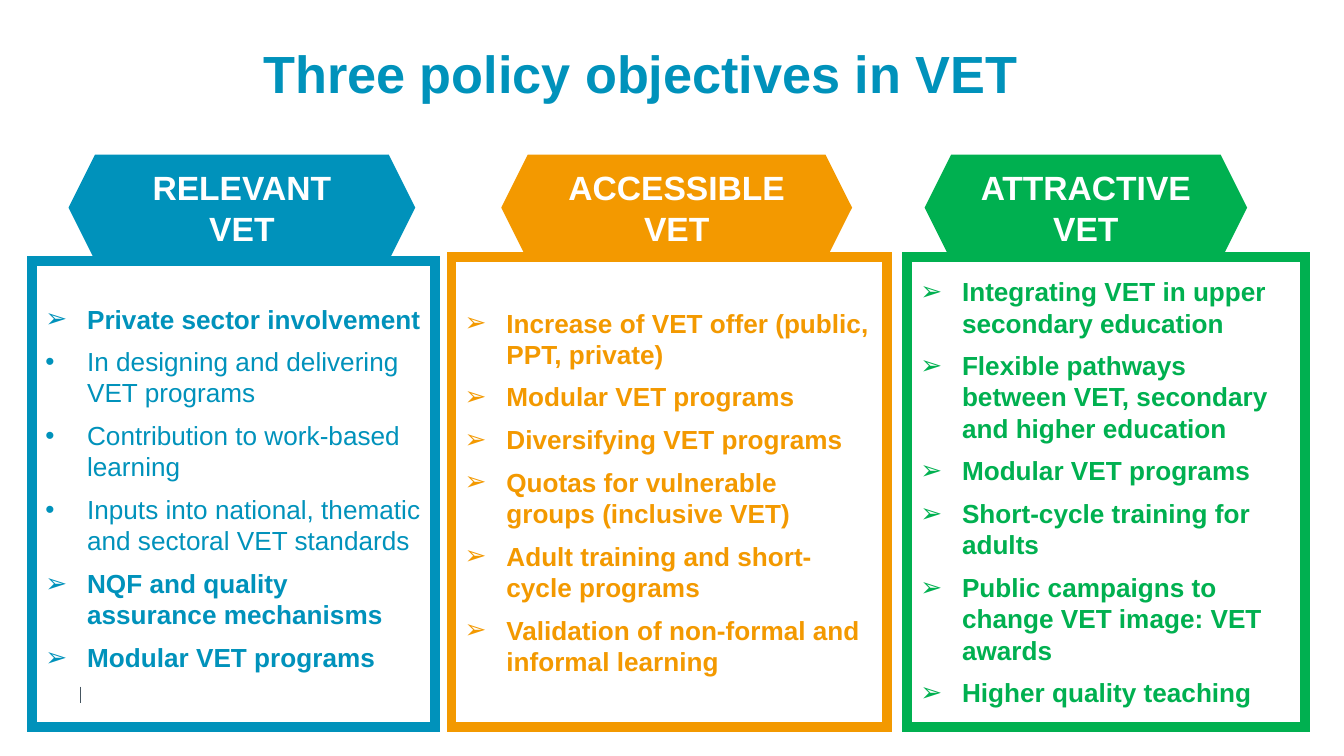
from pptx import Presentation
from pptx.dml.color import RGBColor
from pptx.enum.shapes import MSO_CONNECTOR, MSO_SHAPE
from pptx.enum.text import MSO_ANCHOR, PP_ALIGN
from pptx.oxml.ns import qn
from pptx.util import Inches, Pt
from lxml import etree

BLUE = RGBColor(0x00, 0x92, 0xBB)
ORANGE = RGBColor(0xF3, 0x99, 0x00)
GREEN = RGBColor(0x00, 0xB0, 0x50)
WHITE = RGBColor(0xFF, 0xFF, 0xFF)
SLATE = RGBColor(0x45, 0x55, 0x60)
ARROW, DOT = "➢", "•"
CARD_BOTTOM = 5.41

# Each objective: heading, colour, card (left, top, width),
# card insets (right, bottom), banner (left, width, side inset), points
OBJECTIVES = [
    ("RELEVANT VET", BLUE, (0.24, 1.94, 3), (0.1, 0.14), (0.51, 2.58, 0.1), [
        (ARROW, "Private sector involvement"),
        (DOT, "In designing and delivering VET programs"),
        (DOT, "Contribution to work-based learning"),
        (DOT, "Inputs into national, thematic and sectoral VET standards"),
        (ARROW, "NQF and quality assurance mechanisms"),
        (ARROW, "Modular VET programs"),
    ]),
    ("ACCESSIBLE VET", ORANGE, (3.36, 1.91, 3.24), (0.13, 0.05), (3.73, 2.61, 0), [
        (ARROW, "Increase of VET offer (public, PPT, private)"),
        (ARROW, "Modular VET programs"),
        (ARROW, "Diversifying VET programs"),
        (ARROW, "Quotas for vulnerable groups (inclusive VET)"),
        (ARROW, "Adult training and short-cycle programs"),
        (ARROW, "Validation of non-formal and informal learning"),
    ]),
    ("ATTRACTIVE VET", GREEN, (6.75, 1.91, 2.96), (0.1, 0.05), (6.88, 2.4, 0), [
        (ARROW, "Integrating VET in upper secondary education"),
        (ARROW, "Flexible pathways between VET, secondary and higher education"),
        (ARROW, "Modular VET programs"),
        (ARROW, "Short-cycle training for adults"),
        (ARROW, "Public campaigns to change VET image: VET awards"),
        (ARROW, "Higher quality teaching"),
    ]),
]


def style_text(paragraph, size, color, bold=True):
    for run in paragraph.runs:
        run.font.name = "Arial"
        run.font.size = Pt(size)
        run.font.bold = bold
        run.font.color.rgb = color


def add_bullet(paragraph, symbol):
    properties = paragraph._p.get_or_add_pPr()
    properties.set("marL", str(Inches(0.31)))
    properties.set("indent", str(-Inches(0.31)))
    etree.SubElement(properties, qn("a:buFont")).set("typeface", "Arial")
    etree.SubElement(properties, qn("a:buChar")).set("char", symbol)


# Widescreen slide, 16:9
prs = Presentation()
prs.slide_width = Inches(10)
prs.slide_height = Inches(10) * 9 // 16
slide = prs.slides.add_slide(prs.slide_layouts[5])

# Title
title = slide.shapes.title
title.left, title.top = Inches(0.65), Inches(0.31)
title.width, title.height = Inches(8.23), Inches(1)
title.text_frame.text = "Three policy objectives in VET"
title.text_frame.vertical_anchor = MSO_ANCHOR.TOP
heading = title.text_frame.paragraphs[0]
heading.alignment = PP_ALIGN.CENTER
heading.line_spacing = 0.9
style_text(heading, 28, BLUE)

# Footer tick
tick = slide.shapes.add_connector(
    MSO_CONNECTOR.STRAIGHT, Inches(0.6), Inches(5.11), Inches(0.6), Inches(5.23))
tick.line.color.rgb = SLATE
tick.line.width = Pt(0.25)
etree.SubElement(tick._element.spPr, qn("a:effectLst"))

for name, color, card_place, card_insets, banner_place, points in OBJECTIVES:
    # Framed card with the points
    left, top, width = card_place
    right_inset, bottom_inset = card_insets
    card = slide.shapes.add_shape(
        MSO_SHAPE.RECTANGLE, Inches(left), Inches(top),
        Inches(width), Inches(CARD_BOTTOM - top))
    card.shadow.inherit = False
    if color == GREEN:
        card.fill.solid()
        card.fill.fore_color.rgb = WHITE
    else:
        card.fill.background()
    card.line.color.rgb = color
    card.line.width = Pt(5.25)
    # Square corners on the frame
    frame = card._element.spPr.find(qn("a:ln"))
    etree.SubElement(frame, qn("a:miter")).set("lim", "800000")
    card_text = card.text_frame
    card_text.word_wrap = True
    card_text.vertical_anchor = MSO_ANCHOR.MIDDLE
    card_text.margin_right = Inches(right_inset)
    card_text.margin_bottom = Inches(bottom_inset)
    card_text.text = "\n".join(text for _, text in points)
    for point, (symbol, _) in zip(card_text.paragraphs, points):
        point.alignment = PP_ALIGN.LEFT
        point.space_after = Pt(6)
        add_bullet(point, symbol)
        style_text(point, 14, color, bold=symbol == ARROW)

    # Hexagonal banner on top of the card
    left, width, side_inset = banner_place
    banner = slide.shapes.add_shape(
        MSO_SHAPE.HEXAGON, Inches(left), Inches(1.15), Inches(width), Inches(0.79))
    banner.shadow.inherit = False
    banner.fill.solid()
    banner.fill.fore_color.rgb = color
    banner.line.fill.background()
    banner_text = banner.text_frame
    banner_text.word_wrap = True
    banner_text.vertical_anchor = MSO_ANCHOR.MIDDLE
    banner_text.margin_left = banner_text.margin_right = Inches(side_inset)
    banner_text.margin_top = banner_text.margin_bottom = Inches(side_inset / 2)
    banner_text.text = name
    banner_text.paragraphs[0].alignment = PP_ALIGN.CENTER
    style_text(banner_text.paragraphs[0], 18, WHITE)

prs.save("out.pptx")
